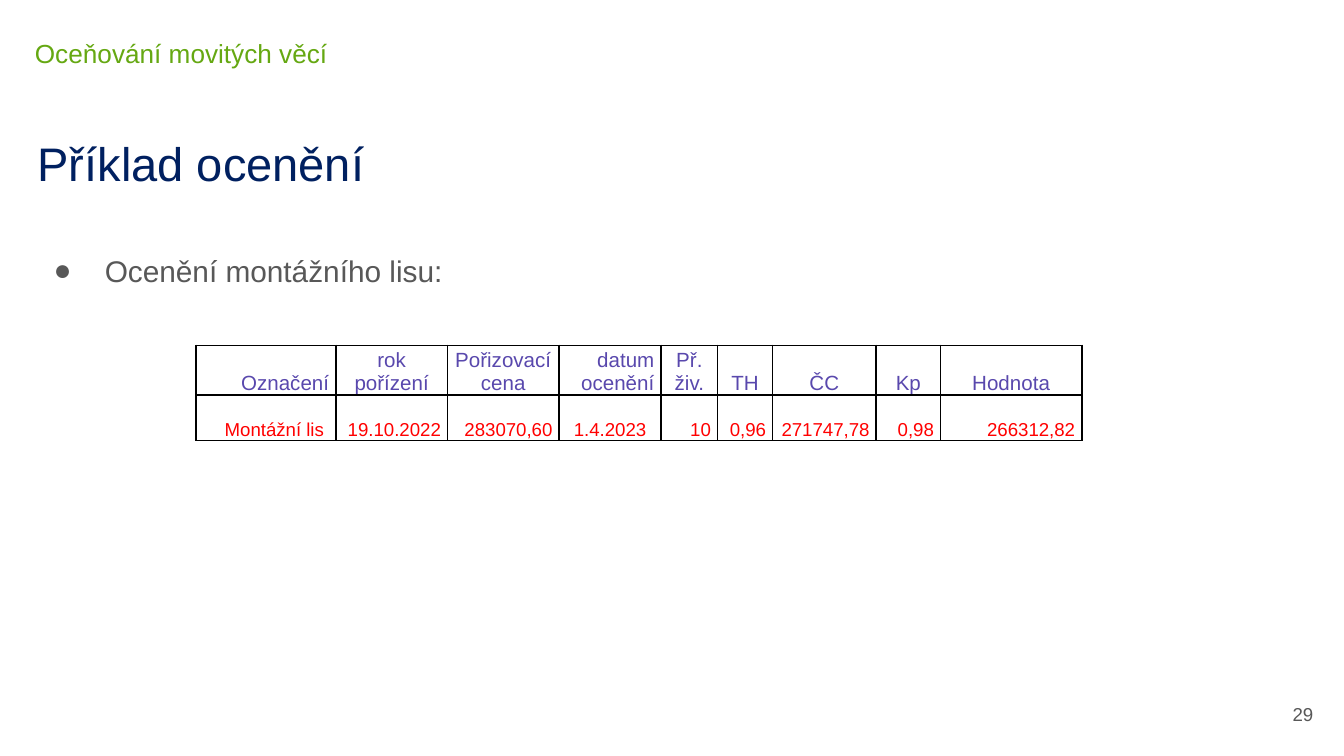
from lxml import etree
from pptx import Presentation
from pptx.dml.color import RGBColor
from pptx.enum.text import MSO_ANCHOR, PP_ALIGN
from pptx.oxml.ns import qn
from pptx.util import Inches, Pt

LEFT, CENTER, RIGHT = PP_ALIGN.LEFT, PP_ALIGN.CENTER, PP_ALIGN.RIGHT
TOP, MIDDLE, BOTTOM = MSO_ANCHOR.TOP, MSO_ANCHOR.MIDDLE, MSO_ANCHOR.BOTTOM

FONT = "Arial"
GREEN, NAVY, GRAY = "65A812", "002060", "585858"
PURPLE, RED, BLACK = "5948AD", "FF0000", "000000"

# header, header alignment, value, value alignment, column width
COLUMNS = [
    ("Označení", RIGHT, "Montážní lis", RIGHT, 1.04),
    ("rok pořízení", CENTER, "19.10.2022", RIGHT, 0.83),
    ("Pořizovací cena", CENTER, "283070,60", RIGHT, 0.83),
    ("datum ocenění", RIGHT, "1.4.2023", CENTER, 0.76),
    ("Př. živ.", CENTER, "10", RIGHT, 0.42),
    ("TH", CENTER, "0,96", RIGHT, 0.41),
    ("ČC", CENTER, "271747,78", RIGHT, 0.77),
    ("Kp", CENTER, "0,98", RIGHT, 0.48),
    ("Hodnota", CENTER, "266312,82", RIGHT, 1.05),
]
ROW_HEIGHTS = (0.35, 0.34)
TABLE_LEFT, TABLE_TOP = 1.46, 2.57
NAME_MARGIN = 0.09


def color(value):
    return RGBColor.from_string(value)


def style(para, size, hue, align):
    para.alignment = align
    para.font.name = FONT
    para.font.size = Pt(size)
    para.font.color.rgb = color(hue)


def add_text(slide, text, place, size, hue, insets=(0, 0.1, 0.1, 0.1),
             align=LEFT, anchor=TOP, wrap=True):
    box = slide.shapes.add_textbox(*map(Inches, place))
    frame = box.text_frame
    frame.word_wrap = wrap
    frame.vertical_anchor = anchor
    (frame.margin_left, frame.margin_top,
     frame.margin_right, frame.margin_bottom) = map(Inches, insets)
    para = frame.paragraphs[0]
    para.text = text
    style(para, size, hue, align)
    return para


def add_bullet(para, char, size, hue, margin, indent):
    props = para._p.get_or_add_pPr()
    props.set("marL", str(Inches(margin)))
    props.set("indent", str(Inches(indent)))
    fill = etree.Element(qn("a:buClr"))
    etree.SubElement(fill, qn("a:srgbClr"), val=hue)
    text_style = props.find(qn("a:defRPr"))
    for part in (fill,
                 etree.Element(qn("a:buSzPts"), val=str(size * 100)),
                 etree.Element(qn("a:buFont"), typeface=FONT),
                 etree.Element(qn("a:buChar"), char=char)):
        text_style.addprevious(part)


def add_borders(cell, hue, width):
    props = cell._tc.get_or_add_tcPr()
    for position, side in enumerate(("lnL", "lnR", "lnT", "lnB")):
        line = etree.Element(qn(f"a:{side}"), w=str(Pt(width)))
        fill = etree.SubElement(line, qn("a:solidFill"))
        etree.SubElement(fill, qn("a:srgbClr"), val=hue)
        props.insert(position, line)


def fill_cell(cell, text, align, size, hue):
    cell.text = text
    cell.margin_left = cell.margin_right = Inches(0.05)
    cell.margin_top = cell.margin_bottom = 0
    cell.vertical_anchor = BOTTOM
    cell.fill.background()
    style(cell.text_frame.paragraphs[0], size, hue, align)
    add_borders(cell, BLACK, 1)


def add_valuation_table(slide):
    width = sum(column[-1] for column in COLUMNS)
    table = slide.shapes.add_table(
        len(ROW_HEIGHTS), len(COLUMNS), Inches(TABLE_LEFT), Inches(TABLE_TOP),
        Inches(width), Inches(sum(ROW_HEIGHTS))).table
    table.first_row = table.horz_banding = False
    for row, height in zip(table.rows, ROW_HEIGHTS):
        row.height = Inches(height)
    for index, (header, header_align, value, value_align, width) in enumerate(COLUMNS):
        table.columns[index].width = Inches(width)
        fill_cell(table.cell(0, index), header, header_align, 11, PURPLE)
        fill_cell(table.cell(1, index), value, value_align, 10, RED)
    table.cell(1, 0).margin_right = Inches(NAME_MARGIN)


def main():
    deck = Presentation()
    deck.slide_width = Inches(10)
    deck.slide_height = deck.slide_width * 9 // 16
    slide = deck.slides.add_slide(deck.slide_layouts[6])

    add_text(slide, "Příklad ocenění", (0.28, 0.9, 8.27, 0.63), 25.2, NAVY)
    item = add_text(slide, "Ocenění montážního lisu:", (0.28, 1.74, 8.27, 3.07), 16, GRAY)
    item.line_spacing = 1.15
    add_bullet(item, "●", 16, GRAY, 0.5, -0.38)
    add_text(slide, "29", (9.5, 5.14, 0.37, 0.35), 10, GRAY,
             insets=(0.1, 0.1, 0.1, 0.1), align=RIGHT, anchor=MIDDLE, wrap=False)
    add_text(slide, "Oceňování movitých věcí", (0.13, 0.28, 8.27, 0.39), 14, GREEN,
             insets=(0.13, 0, 0.1, 0.1))
    add_valuation_table(slide)
    deck.save("out.pptx")


if __name__ == "__main__":
    main()
